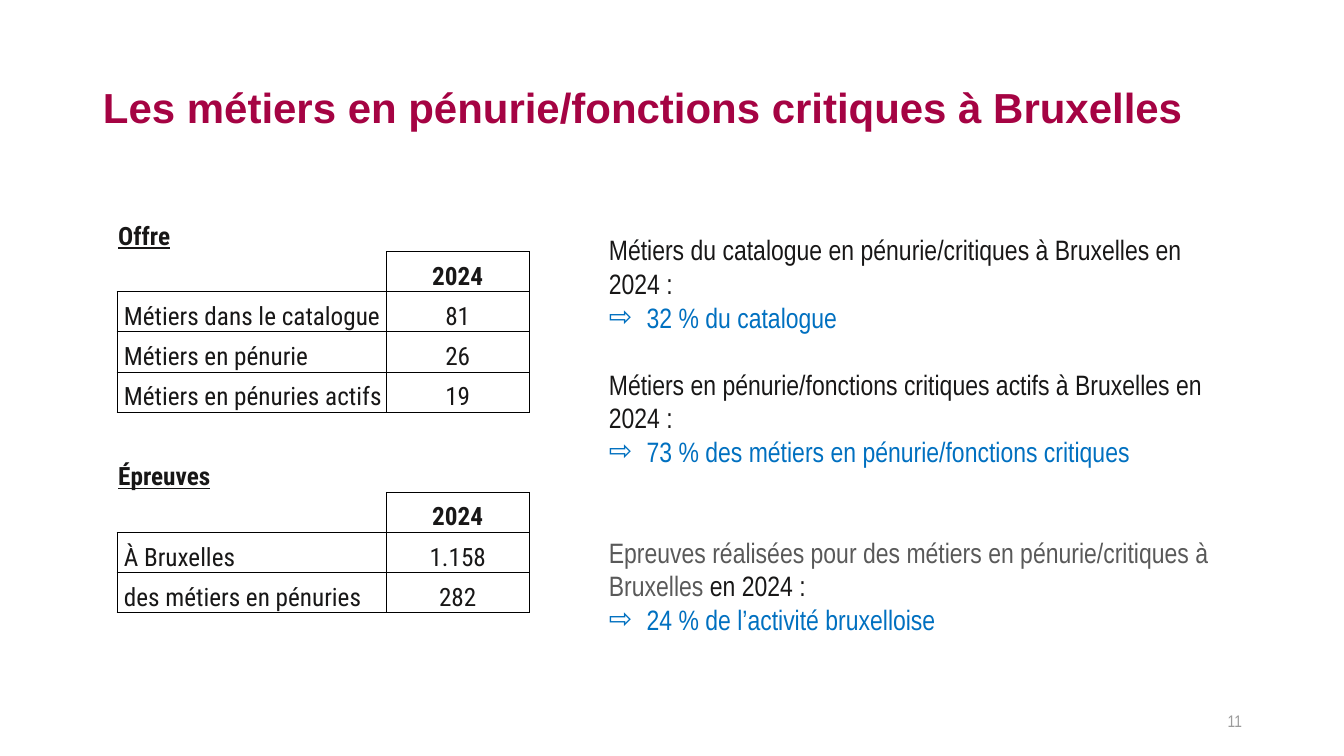
from dataclasses import dataclass
from typing import Any

from lxml.etree import SubElement
from pptx import Presentation
from pptx.dml.color import RGBColor
from pptx.enum.text import MSO_ANCHOR, MSO_AUTO_SIZE, PP_ALIGN
from pptx.oxml.ns import qn
from pptx.util import Cm, Pt

COLORS = {"title": "A50343", "text": "181717", "result": "0070C0",
          "muted": "595959", "number": "9B9B9B", "border": "000000"}
TITLE_FONT = {"name": "Arial", "size": Pt(30), "bold": True}
TABLE_FONT = {"name": "Roboto Condensed", "size": Pt(18)}
BODY_FONT = {"name": "Arial Narrow", "size": Pt(20)}
NUMBER_FONT = {"name": "Arial Narrow", "size": Pt(12)}
CELL_FORMAT = {"margin_left": Cm(0.03), "margin_right": Cm(0.03), "margin_top": Cm(0.03),
               "margin_bottom": Cm(0), "vertical_anchor": MSO_ANCHOR.BOTTOM}
FRAME_FORMAT = {"word_wrap": True, "auto_size": MSO_AUTO_SIZE.NONE}
COLUMN_WIDTHS = (6.78, 3.61)
ROW_HEIGHT = 1.01
EDGES = {"a:lnL": (0, -1), "a:lnR": (0, 1), "a:lnT": (-1, 0), "a:lnB": (1, 0)}


@dataclass
class TableRow:
    """One row of the figures table."""
    label: str = ""
    value: str = ""

    @property
    def boxed(self) -> tuple[bool, bool]:
        """Tell which of the two cells have a frame."""
        return bool(self.label and self.value), bool(self.value)


@dataclass
class Finding:
    """A statement in coloured phrases, followed by its arrowed result."""
    phrases: list[tuple[str, str]]
    result: str
    space_before: int = 0


ROWS = [
    TableRow("Offre"),
    TableRow(value="2024"),
    TableRow("Métiers dans le catalogue", "81"),
    TableRow("Métiers en pénurie", "26"),
    TableRow("Métiers en pénuries actifs", "19"),
    TableRow(),
    TableRow("Épreuves"),
    TableRow(value="2024"),
    TableRow("À Bruxelles", "1.158"),
    TableRow("des métiers en pénuries", "282"),
]
FINDINGS = [
    Finding([("Métiers du catalogue en pénurie/critiques à Bruxelles en 2024 :", "text")],
            "32 % du catalogue"),
    Finding([("Métiers en pénurie/fonctions critiques actifs à Bruxelles en 2024 :", "text")],
            "73 % des métiers en pénurie/fonctions critiques", 24),
    Finding([("Epreuves réalisées pour des métiers en pénurie/critiques à Bruxelles ", "muted"),
             ("en 2024 :", "text")],
            "24 % de l’activité bruxelloise", 48),
]


def apply_format(target: Any, values: dict[str, Any]) -> None:
    """Set each named attribute on the target."""
    for name, value in values.items():
        setattr(target, name, value)


def place(shape: Any, left: float, top: float, width: float, height: float) -> None:
    """Position a shape, in centimetres."""
    apply_format(shape, {"left": Cm(left), "top": Cm(top),
                         "width": Cm(width), "height": Cm(height)})


def add_text(paragraph: Any, text: str, font: dict[str, Any], color: str) -> None:
    """Append a formatted run to a paragraph."""
    run = paragraph.add_run()
    run.text = text
    apply_format(run.font, font)
    run.font.color.rgb = RGBColor.from_string(COLORS[color])


def is_boxed(row: int, column: int) -> bool:
    """Tell whether a table position exists and has a frame."""
    return 0 <= row < len(ROWS) and 0 <= column < 2 and ROWS[row].boxed[column]


def draw_borders(cell: Any, row: int, column: int) -> None:
    """Draw every edge shared with a framed cell and clear the others."""
    properties = cell._tc.get_or_add_tcPr()
    for index, (tag, (down, right)) in enumerate(EDGES.items()):
        line = SubElement(properties, qn(tag), w=str(Pt(0.5)))
        if is_boxed(row, column) or is_boxed(row + down, column + right):
            fill = SubElement(line, qn("a:solidFill"))
            SubElement(fill, qn("a:srgbClr"), val=COLORS["border"])
        else:
            SubElement(line, qn("a:noFill"))
        properties.insert(index, line)


def add_figures(slide: Any) -> None:
    """Add the table of figures."""
    table = slide.shapes.add_table(len(ROWS), 2, Cm(2.95), Cm(5.33), Cm(sum(COLUMN_WIDTHS)),
                                   Cm(ROW_HEIGHT * len(ROWS))).table
    apply_format(table, {"first_row": False, "horz_banding": False})
    for column, width in zip(table.columns, COLUMN_WIDTHS):
        column.width = Cm(width)
    for row_index, row in enumerate(ROWS):
        table.rows[row_index].height = Cm(ROW_HEIGHT)
        for column_index, text in enumerate((row.label, row.value)):
            cell = table.cell(row_index, column_index)
            apply_format(cell, CELL_FORMAT)
            cell.fill.background()
            draw_borders(cell, row_index, column_index)
            if column_index == 0 and row.value:
                cell.margin_left = Cm(0.17)
            if text:
                paragraph = cell.text_frame.paragraphs[0]
                paragraph.alignment = PP_ALIGN.CENTER if column_index else PP_ALIGN.LEFT
                heading = not (row.label and row.value)
                style = {"bold": heading, "underline": heading and column_index == 0}
                add_text(paragraph, text, TABLE_FONT | style, "text")


def set_bullet(paragraph: Any, character: str = "") -> None:
    """Give a paragraph a hanging bullet, or none."""
    properties = paragraph._p.get_or_add_pPr()
    indent = Cm(0.95) if character else 0
    properties.set("marL", str(indent))
    properties.set("indent", str(-indent))
    if character:
        SubElement(properties, qn("a:buChar"), char=character)
    else:
        SubElement(properties, qn("a:buNone"))


def add_findings(body: Any) -> None:
    """Fill the body with the findings."""
    place(body, 15.09, 5.74, 16.69, 9.65)
    frame = body.text_frame
    apply_format(frame, FRAME_FORMAT | {"vertical_anchor": MSO_ANCHOR.TOP})
    for index, finding in enumerate(FINDINGS):
        statement = frame.add_paragraph() if index else frame.paragraphs[0]
        set_bullet(statement)
        statement.space_before = Pt(finding.space_before)
        for text, color in finding.phrases:
            add_text(statement, text, BODY_FONT, color)
        result = frame.add_paragraph()
        set_bullet(result, "⇨")
        result.space_before = Pt(0)
        add_text(result, finding.result, BODY_FONT, "result")


def add_line(shape: Any, text: str, font: dict[str, Any], color: str, style: dict[str, Any]) -> None:
    """Write one vertically centred line in a shape."""
    apply_format(shape.text_frame, FRAME_FORMAT | {"vertical_anchor": MSO_ANCHOR.MIDDLE})
    paragraph = shape.text_frame.paragraphs[0]
    apply_format(paragraph, style)
    add_text(paragraph, text, font, color)


def main() -> None:
    """Build and save the slide."""
    presentation = Presentation()
    apply_format(presentation, {"slide_width": Cm(33.87), "slide_height": Cm(19.05)})
    slide = presentation.slides.add_slide(presentation.slide_layouts[1])
    title = slide.shapes.title
    place(title, 2.34, 0.94, 29.21, 3.68)
    add_line(title, "Les métiers en pénurie/fonctions critiques à Bruxelles", TITLE_FONT, "title",
             {"alignment": PP_ALIGN.LEFT, "line_spacing": 0.9})
    add_figures(slide)
    add_findings(slide.placeholders[1])
    number = slide.shapes.add_textbox(Cm(23.93), Cm(17.65), Cm(7.62), Cm(1.02))
    add_line(number, "11", NUMBER_FONT, "number", {"alignment": PP_ALIGN.RIGHT})
    presentation.save("out.pptx")


if __name__ == "__main__":
    main()
